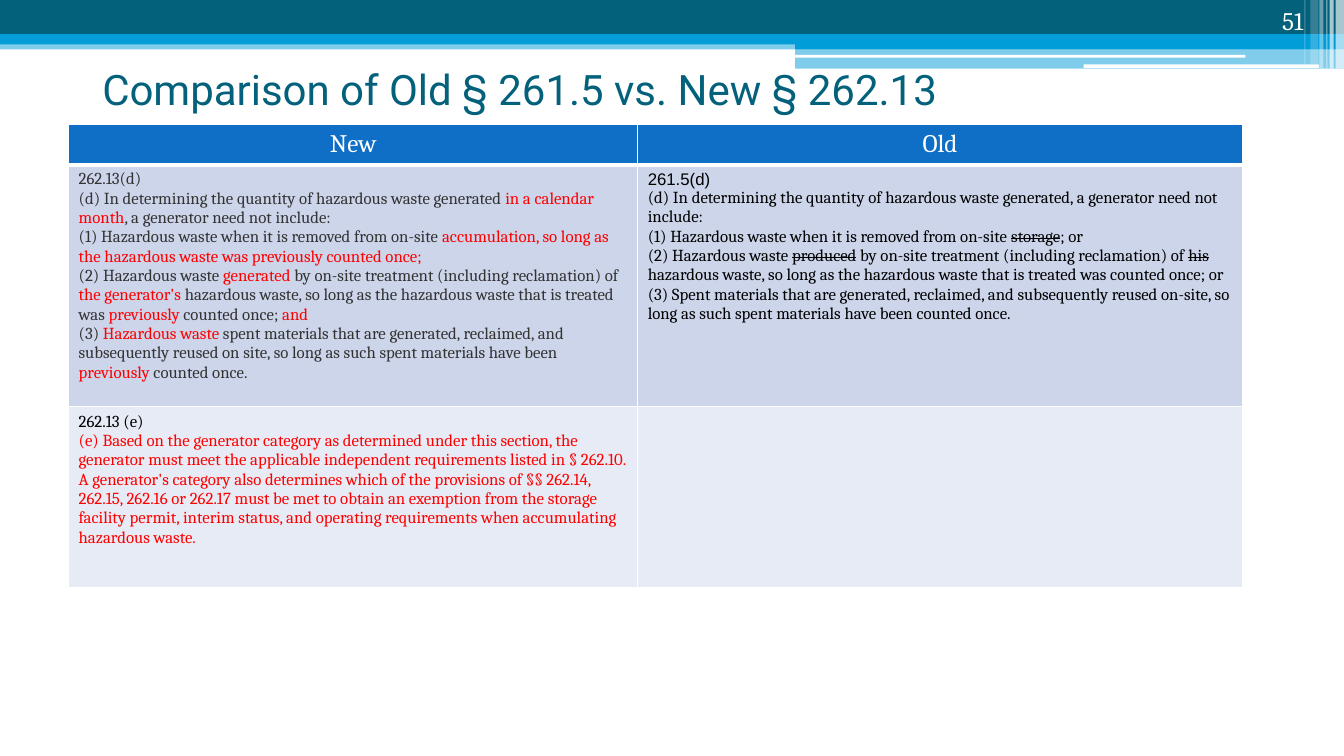
from pptx import Presentation
from pptx.dml.color import RGBColor
from pptx.enum.shapes import MSO_SHAPE
from pptx.enum.text import MSO_ANCHOR, PP_ALIGN
from pptx.oxml.ns import qn
from pptx.util import Pt
from lxml.etree import SubElement

TEAL = RGBColor(0x04, 0x61, 0x7B)
SKY = RGBColor(0x00, 0x9D, 0xD9)
HEADER_BLUE = RGBColor(0x0F, 0x6F, 0xC6)
ROW_DARK = RGBColor(0xCC, 0xD5, 0xEA)
ROW_LIGHT = RGBColor(0xE7, 0xEB, 0xF5)
WHITE = RGBColor(0xFF, 0xFF, 0xFF)
BLACK = RGBColor(0x00, 0x00, 0x00)
GRAY = RGBColor(0x33, 0x33, 0x33)
RED = RGBColor(0xFF, 0x00, 0x00)

# left, top, width, height, colour, opacity in percent
BANDS = [
    (0, 28.8, 960, 6.5, SKY, 50),
    (0, 0, 960, 24.5, TEAL, 100),
    (0, 24.5, 960, 7.2, SKY, 100),
    (568, 28, 392, 7.2, SKY, 100),
    (568, 34.8, 392, 14.2, SKY, 50),
]
WHITE_LINES = [(567.5, 39.2, 322, 2), (774, 46, 168, 2.7)]
# left, width, height, opacity in percent
STRIPES = [
    (954, 6, 49, 65),
    (949.7, 2.9, 49, 65),
    (947.5, 0.7, 49, 60),
    (942.5, 2.9, 49, 40),
    (936, 5.8, 46, 20),
    (931.7, 0.7, 46, 30),
]

# Text between bars is a marked change.
NEW_D = [
    "262.13(d)",
    "(d) In determining the quantity of hazardous waste generated |in a calendar month|"
    ", a generator need not include:",
    "(1) Hazardous waste when it is removed from on-site |accumulation, so long as "
    "the hazardous waste was previously counted once;|",
    "(2) Hazardous waste |generated| by on-site treatment (including reclamation) of "
    "|the generator's| hazardous waste, so long as the hazardous waste that is treated "
    "was |previously |counted once; |and|",
    "(3) |Hazardous waste |spent materials that are generated, reclaimed, and "
    "subsequently reused on site, so long as such spent materials have been "
    "|previously |counted once.",
]
OLD_D = [
    "261.5(d)",
    "(d) In determining the quantity of hazardous waste generated, a generator need "
    "not include:",
    "(1) Hazardous waste when it is removed from on-site |storage|; or",
    "(2) Hazardous waste |produced| by on-site treatment (including reclamation) of "
    "|his| hazardous waste, so long as the hazardous waste that is treated was counted "
    "once; or",
    "(3) Spent materials that are generated, reclaimed, and subsequently reused "
    "on-site, so long as such spent materials have been counted once.",
]
NEW_E = [
    "262.13 (e)",
    "|(e) Based on the generator category as determined under this section, the "
    "generator must meet the applicable independent requirements listed in § 262.10. "
    "A generator's category also determines which of the provisions of §§ 262.14, "
    "262.15, 262.16 or 262.17 must be met to obtain an exemption from the storage "
    "facility permit, interim status, and operating requirements when accumulating "
    "hazardous waste.|",
]


def add_block(slide, left, top, width, height, color, opacity=100,
              preset=MSO_SHAPE.RECTANGLE):
    shape = slide.shapes.add_shape(preset, Pt(left), Pt(top), Pt(width), Pt(height))
    shape.shadow.inherit = False
    shape.line.fill.background()
    shape.fill.solid()
    shape.fill.fore_color.rgb = color
    if opacity < 100:
        color_element = shape._element.spPr.find(qn("a:solidFill"))[0]
        SubElement(color_element, qn("a:alpha"), val=str(opacity * 1000))


def format_font(font, name, size, color):
    font.name = name
    font.size = Pt(size)
    font.color.rgb = color


def add_text(slide, left, top, width, height, text, font, anchor, alignment):
    box = slide.shapes.add_textbox(Pt(left), Pt(top), Pt(width), Pt(height))
    frame = box.text_frame
    frame.word_wrap = True
    frame.vertical_anchor = anchor
    frame.text = text
    frame.paragraphs[0].alignment = alignment
    format_font(frame.paragraphs[0].runs[0].font, *font)


def style_cell(cell, color, bottom_width=1):
    """Fill the cell and give it white borders."""
    properties = cell._tc.get_or_add_tcPr()
    for side, width in (("L", 1), ("R", 1), ("T", 1), ("B", bottom_width)):
        line = SubElement(properties, qn(f"a:ln{side}"), w=str(Pt(width)))
        fill = SubElement(line, qn("a:solidFill"))
        SubElement(fill, qn("a:srgbClr"), val=str(WHITE))
    cell.fill.solid()
    cell.fill.fore_color.rgb = color


def write_clauses(cell, clauses, color, marked_color, strike=False):
    """Write one paragraph per clause; odd parts between bars are marked."""
    frame = cell.text_frame
    for number, clause in enumerate(clauses):
        paragraph = frame.add_paragraph() if number else frame.paragraphs[0]
        for index, part in enumerate(clause.split("|")):
            if not part:
                continue
            marked = index % 2 == 1
            run = paragraph.add_run()
            run.text = part
            format_font(run.font, "Cambria", 12, marked_color if marked else color)
            if marked and strike:
                run._r.get_or_add_rPr().set("strike", "sngStrike")


def add_comparison_table(slide):
    widths, heights = (406.5, 432), (27.5, 173, 129)
    frame = slide.shapes.add_table(3, 2, Pt(49), Pt(88.8), Pt(sum(widths)),
                                   Pt(sum(heights)))
    table = frame.table
    table.horz_banding = False
    for column, width in zip(table.columns, widths):
        column.width = Pt(width)
    for row, height, color in zip(table.rows, heights,
                                  (HEADER_BLUE, ROW_DARK, ROW_LIGHT)):
        row.height = Pt(height)
        for cell in row.cells:
            style_cell(cell, color, 3 if color == HEADER_BLUE else 1)
    for cell, heading in zip(table.rows[0].cells, ("New", "Old")):
        cell.text_frame.text = heading
        paragraph = cell.text_frame.paragraphs[0]
        paragraph.alignment = PP_ALIGN.CENTER
        format_font(paragraph.runs[0].font, "Cambria", 18, WHITE)
        paragraph.runs[0].font.bold = False
    write_clauses(table.cell(1, 0), NEW_D, GRAY, RED)
    write_clauses(table.cell(1, 1), OLD_D, BLACK, BLACK, strike=True)
    write_clauses(table.cell(2, 0), NEW_E, BLACK, RED)
    table.cell(1, 1).text_frame.paragraphs[0].runs[0].font.name = "Arial"
    table.first_row = False


def main():
    presentation = Presentation()
    presentation.slide_width = Pt(960)
    presentation.slide_height = Pt(540)
    slide = presentation.slides.add_slide(presentation.slide_layouts[6])
    for band in BANDS:
        add_block(slide, *band)
    for line in WHITE_LINES:
        add_block(slide, *line, WHITE, preset=MSO_SHAPE.ROUNDED_RECTANGLE)
    for left, width, height, opacity in STRIPES:
        add_block(slide, left, 0, width, height, WHITE, opacity)
    add_text(slide, 66, 29, 828, 69, "Comparison of Old § 261.5 vs. New § 262.13",
             ("Roboto", 30, TEAL), MSO_ANCHOR.MIDDLE, PP_ALIGN.LEFT)
    add_comparison_table(slide)
    add_text(slide, 858, 0, 80, 28.8, "51", ("Cambria", 18, WHITE),
             MSO_ANCHOR.BOTTOM, PP_ALIGN.RIGHT)
    presentation.save("out.pptx")


if __name__ == "__main__":
    main()
